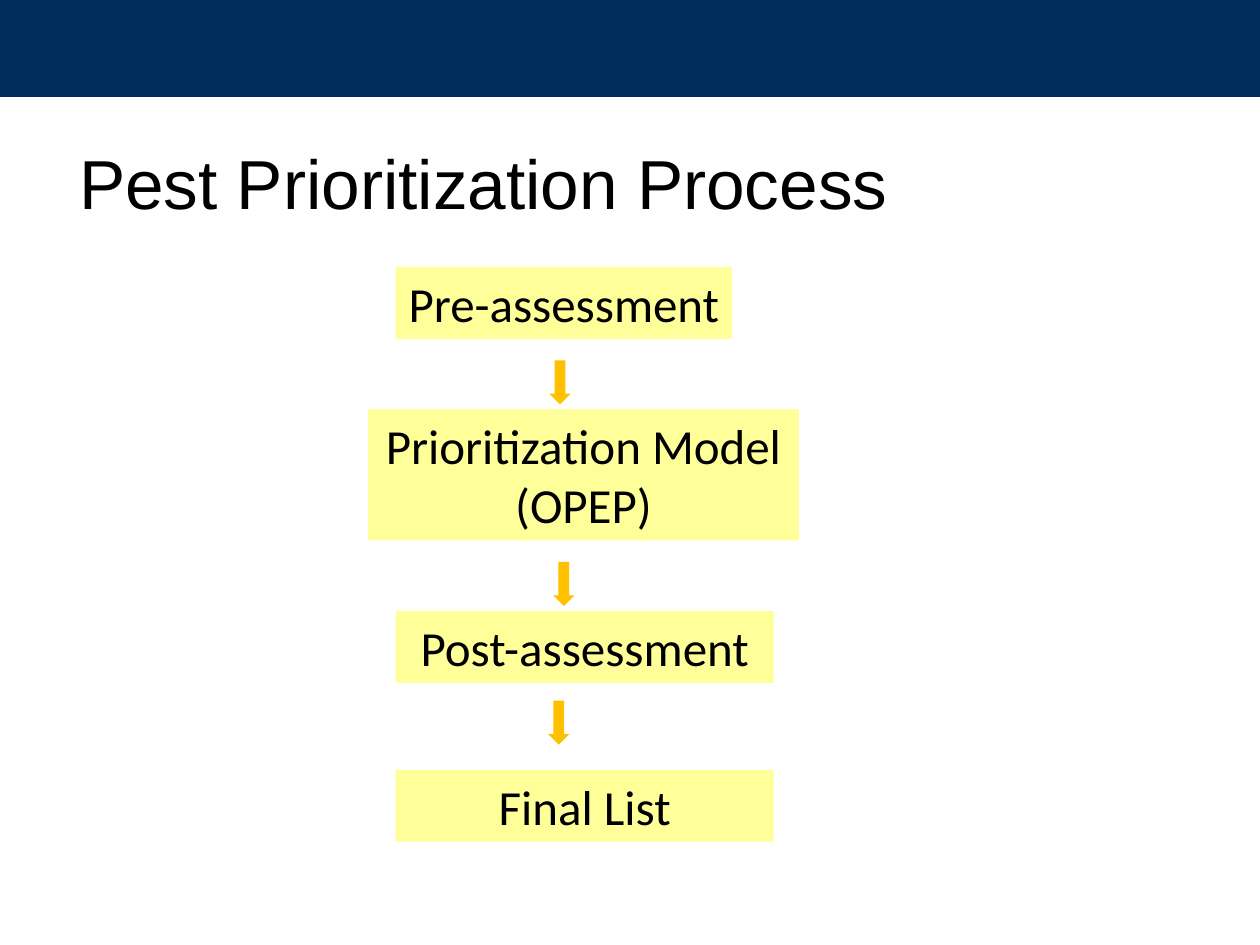
import pptx
import pptx.util
import pptx.dml.color
import pptx.enum.shapes
import pptx.enum.text

Inches = pptx.util.Inches
Pt = pptx.util.Pt
RGBColor = pptx.dml.color.RGBColor
Shape = pptx.enum.shapes.MSO_SHAPE
Anchor = pptx.enum.text.MSO_ANCHOR
Align = pptx.enum.text.PP_ALIGN

NAVY = RGBColor(0x00, 0x2D, 0x5B)
YELLOW = RGBColor(0xFF, 0xFF, 0x99)
AMBER = RGBColor(0xFF, 0xC0, 0x00)
BLACK = RGBColor(0x00, 0x00, 0x00)

# Each step: label, left, top, width, height
STEPS = [
    ("Pre-assessment", 3.14, 2.12, 2.67, 0.57),
    ("Prioritization Model (OPEP)", 2.92, 3.25, 3.42, 1.04),
    ("Post-assessment", 3.14, 4.85, 3, 0.57),
    ("Final List", 3.14, 6.11, 3, 0.57),
]
# Left and top of the arrow after each step but the last
ARROWS = [(4.36, 2.86), (4.39, 4.46), (4.35, 5.56)]


def add_block(slide, kind, box, color):
    block = slide.shapes.add_shape(kind, *map(Inches, box))
    block.shadow.inherit = False
    block.fill.solid()
    block.fill.fore_color.rgb = color
    block.line.fill.background()
    return block


def set_text(frame, text, font, size, align):
    frame.word_wrap = True
    line = frame.paragraphs[0]
    line.text = text
    line.alignment = align
    line.font.name = font
    line.font.size = Pt(size)
    line.font.color.rgb = BLACK


def add_title(slide, box):
    frame = slide.shapes.add_textbox(*map(Inches, box)).text_frame
    frame.vertical_anchor = Anchor.MIDDLE
    set_text(frame, "Pest Prioritization Process", "Arial", 39.6, Align.LEFT)


def add_step(slide, label, box):
    frame = add_block(slide, Shape.RECTANGLE, box, YELLOW).text_frame
    frame.vertical_anchor = Anchor.TOP
    # Narrow side margins keep each hyphenated label on one line
    frame.margin_left = frame.margin_right = Inches(0.05)
    set_text(frame, label, "Calibri", 28, Align.CENTER)


def add_flow(slide):
    for label, *box in STEPS:
        add_step(slide, label, box)
    for left, top in ARROWS:
        add_block(slide, Shape.DOWN_ARROW, (left, top, 0.17, 0.35), AMBER)


def main():
    deck = pptx.Presentation()
    deck.slide_width = Inches(10)
    deck.slide_height = Inches(7.5)
    slide = deck.slides.add_slide(deck.slide_layouts[6])

    # Heading
    add_title(slide, (0.53, 1.08, 8.59, 0.73))
    # Top band
    add_block(slide, Shape.RECTANGLE, (0, 0, 10, 0.77), NAVY)
    # Process steps and arrows
    add_flow(slide)

    deck.save("out.pptx")


if __name__ == "__main__":
    main()
